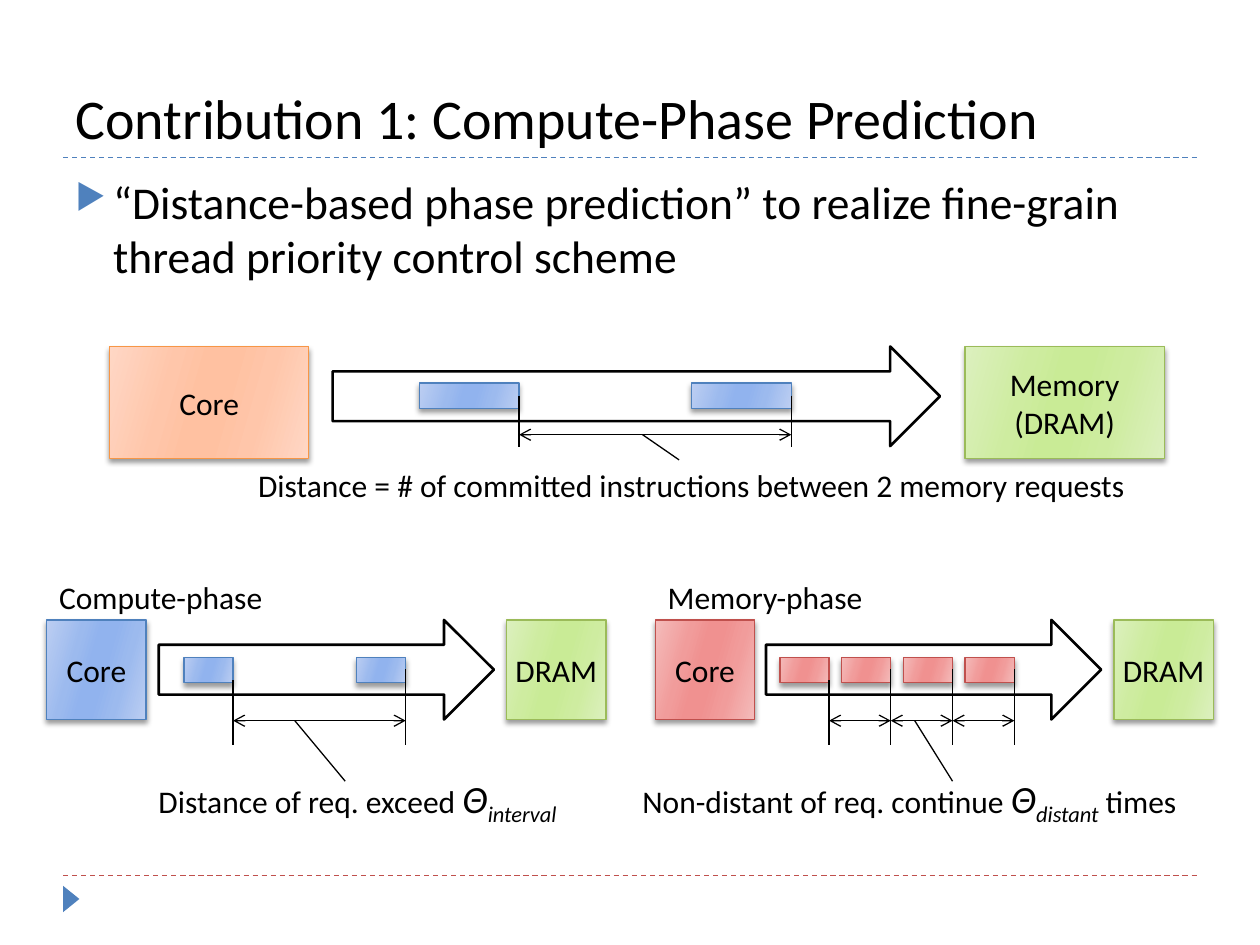
from lxml import etree
from pptx import Presentation
from pptx import oxml
from pptx import util as u
from pptx.dml import color
from pptx.enum import dml, shapes, text
from pptx.oxml import ns

THEME = {
    "font": "Calibri",
    "ink": "000000",
    "paper": "FFFFFF",
    "accent": "4F81BD",
    "footer": "C0504D",
    "title": 32,
    "body": 26,
    "label": 18,
    "symbol": 22,
    # Line colour, then gradient colours from the edge to the centre
    "orange": ("F79646", "FFD7C5", "FFC6AA", "FFC1A1"),
    "green": ("9BBB59", "DCF0BE", "CEECA0", "C9EB96"),
    "blue": ("4F81BD", "BCCEF2", "9CBAEE", "91B3EE"),
    "red": ("C0504D", "F4BCBB", "F19C9B", "F09190"),
}
rgb = color.RGBColor.from_string


def write(frame, content, size=THEME["label"], align=text.PP_ALIGN.LEFT,
          anchor=text.MSO_ANCHOR.TOP, wrap=True, grow=False, bullet=None):
    """Fill a frame with a string, or with (text, style) spans of one paragraph."""
    frame.word_wrap = wrap
    frame.auto_size = (text.MSO_AUTO_SIZE.SHAPE_TO_FIT_TEXT if grow
                       else text.MSO_AUTO_SIZE.NONE)
    frame.vertical_anchor = anchor
    if isinstance(content, str):
        lines = [[(line, "plain")] for line in content.split("\n")]
    else:
        lines = [content]
    for index, spans in enumerate(lines):
        para = frame.add_paragraph() if index else frame.paragraphs[0]
        para.alignment = align
        if bullet:
            props = para._p.get_or_add_pPr()
            props.set("marL", str(u.Inches(0.3)))
            props.set("indent", str(u.Inches(-0.3)))
            tint = etree.SubElement(props, ns.qn("a:buClr"))
            etree.SubElement(tint, ns.qn("a:srgbClr"), val=THEME["accent"])
            etree.SubElement(props, ns.qn("a:buSzPct"), val="76000")
            etree.SubElement(props, ns.qn("a:buChar"), char=bullet)
        for words, style in spans:
            span = para.add_run()
            span.text = words
            span.font.name = THEME["font"]
            span.font.size = u.Pt(size if style == "plain" else THEME["symbol"])
            span.font.color.rgb = rgb(THEME["ink"])
            if style != "plain":
                span.font.italic = True
            if style == "subscript":
                span._r.get_or_add_rPr().set("baseline", "-25000")


def draw_line(canvas, start, end, tint=THEME["ink"], dashed=False, arrows=False):
    line = canvas.add_connector(shapes.MSO_CONNECTOR.STRAIGHT,
                                *map(u.Inches, (*start, *end)))
    line.line.color.rgb = rgb(tint)
    line.line.width = u.Pt(0.75)
    if dashed:
        line.line.dash_style = dml.MSO_LINE.DASH
    if arrows:
        for tag in ("a:headEnd", "a:tailEnd"):
            etree.SubElement(line.line._get_or_add_ln(), ns.qn(tag), type="arrow")
    etree.SubElement(line._element.spPr, ns.qn("a:effectLst"))


deck = Presentation()
deck.slide_width, deck.slide_height = u.Inches(10), u.Inches(7.5)
page = deck.slides.add_slide(deck.slide_layouts[5])

# Rules and footer marker
draw_line(page.shapes, (0.5, 6.95), (9.5, 6.95), THEME["footer"], dashed=True)
draw_line(page.shapes, (0.5, 1.25), (9.5, 1.25), THEME["accent"], dashed=True)
marker = page.shapes.add_shape(shapes.MSO_SHAPE.ISOSCELES_TRIANGLE,
                               *map(u.Inches, (0.46, 7.07, 0.21, 0.13)))
marker.rotation = 90
marker.shadow.inherit = False
marker.fill.solid()
marker.fill.fore_color.rgb = rgb(THEME["accent"])
marker.line.fill.background()

# Title and lead statement
title = page.shapes.title
title.left, title.top, title.width, title.height = map(u.Inches, (0.5, 0.17, 9, 1.08))
write(title.text_frame, "Contribution 1: Compute-Phase Prediction",
      size=THEME["title"], anchor=text.MSO_ANCHOR.BOTTOM)
lead = page.shapes.add_textbox(*map(u.Inches, (0.5, 1.33, 9, 1.04)))
write(lead.text_frame,
      "“Distance-based phase prediction” to realize fine-grain thread priority control scheme",
      size=THEME["body"], bullet="▶")

# Each diagram: core and memory blocks, an arrow carrying requests, and the
# distances measured between the right edges of the requests
diagrams = [
    {"core": ("Core", "orange", (0.87, 2.75, 1.58, 0.89)),
     "memory": ("Memory\n(DRAM)", "green", (7.66, 2.75, 1.58, 0.89)),
     "arrow": (2.64, 2.75, 4.82, 0.79),
     "request": ("blue", 3.04, 0.79), "ends": (4.12, 6.28),
     "ticks": (3.14, 3.14, 3.55), "measure": 3.45,
     "leader": ((5.1, 3.45), (5.39, 3.65)),
     "caption": ("Distance = # of committed instructions between 2 memory requests",
                 (1.95, 3.65, 7.48, 0.4))},
    {"core": ("Core", "blue", (0.37, 4.92, 0.79, 0.79)),
     "memory": ("DRAM", "green", (4.02, 4.92, 0.79, 0.79)),
     "arrow": (1.26, 4.92, 2.66, 0.79),
     "request": ("blue", 5.22, 0.39), "ends": (1.85, 3.22),
     "ticks": (5.4, 5.31, 5.91), "measure": 5.72,
     "leader": ((2.34, 5.72), (2.74, 6.2)),
     "caption": ([("Distance of req. exceed ", "plain"), ("Θ", "symbol"),
                  ("interval", "subscript")], (1.16, 6.1, 3.73, 0.47)),
     "heading": ("Compute-phase", (0.37, 4.54, 3.45, 0.4))},
    {"core": ("Core", "red", (5.2, 4.92, 0.79, 0.79)),
     "memory": ("DRAM", "green", (8.84, 4.92, 0.79, 0.79)),
     "arrow": (6.08, 4.92, 2.66, 0.79),
     "request": ("red", 5.22, 0.39), "ends": (6.58, 7.07, 7.56, 8.05),
     "ticks": (5.4, 5.31, 5.91), "measure": 5.72,
     "leader": ((7.26, 5.72), (7.56, 6.2)),
     "caption": ([("Non-distant of req. continue ", "plain"), ("Θ", "symbol"),
                  ("distant", "subscript"), (" times", "plain")],
                 (5, 6.1, 4.82, 0.47)),
     "heading": ("Memory-phase", (5.2, 4.54, 3.45, 0.4))},
]

for diagram in diagrams:
    grouped = "heading" in diagram
    canvas = page.shapes.add_group_shape().shapes if grouped else page.shapes

    arrow = canvas.add_shape(shapes.MSO_SHAPE.RIGHT_ARROW,
                             *map(u.Inches, diagram["arrow"]))
    arrow.shadow.inherit = False
    arrow.fill.solid()
    arrow.fill.fore_color.rgb = rgb(THEME["paper"])
    arrow.line.color.rgb = rgb(THEME["ink"])
    arrow.line.width = u.Pt(1.5)

    hue, top, width = diagram["request"]
    requests = [("", hue, (end - width, top, width, 0.2)) for end in diagram["ends"]]
    for label, hue, place in [diagram["core"], diagram["memory"], *requests]:
        box = canvas.add_shape(shapes.MSO_SHAPE.RECTANGLE, *map(u.Inches, place))
        outline, edge, middle, centre = THEME[hue]
        box.line.color.rgb = rgb(outline)
        box.line.width = u.Pt(0.75)
        gradient = etree.Element(ns.qn("a:gradFill"), rotWithShape="1")
        stops = etree.SubElement(gradient, ns.qn("a:gsLst"))
        for position, tint in zip((0, 30, 45, 55, 73, 100),
                                  (edge, middle, centre, centre, middle, edge)):
            stop = etree.SubElement(stops, ns.qn("a:gs"), pos=str(position * 1000))
            etree.SubElement(stop, ns.qn("a:srgbClr"), val=tint)
        etree.SubElement(gradient, ns.qn("a:lin"), ang=str(16 * 60000), scaled="1")
        box._element.spPr.find(ns.qn("a:prstGeom")).addnext(gradient)
        box.shadow.inherit = False
        box._element.spPr.find(ns.qn("a:effectLst")).append(oxml.parse_xml(
            f'<a:outerShdw {ns.nsdecls("a")} blurRad="{u.Pt(3)}" dist="{u.Pt(2)}" '
            'dir="5400000" rotWithShape="0"><a:srgbClr val="000000">'
            '<a:alpha val="40000"/></a:srgbClr></a:outerShdw>'))
        if label:
            write(box.text_frame, label, align=text.PP_ALIGN.CENTER,
                  anchor=text.MSO_ANCHOR.MIDDLE, wrap=label != "DRAM")

    ends, level = diagram["ends"], diagram["measure"]
    first_top, other_top, bottom = diagram["ticks"]
    for index, end in enumerate(ends):
        draw_line(canvas, (end, other_top if index else first_top), (end, bottom))
    for start, end in zip(ends, ends[1:]):
        draw_line(canvas, (start, level), (end, level), arrows=True)
    draw_line(canvas, *diagram["leader"])

    for key in ("caption", "heading"):
        if key in diagram:
            content, place = diagram[key]
            note = canvas.add_textbox(*map(u.Inches, place))
            write(note.text_frame, content, grow=True)

deck.save("out.pptx")
